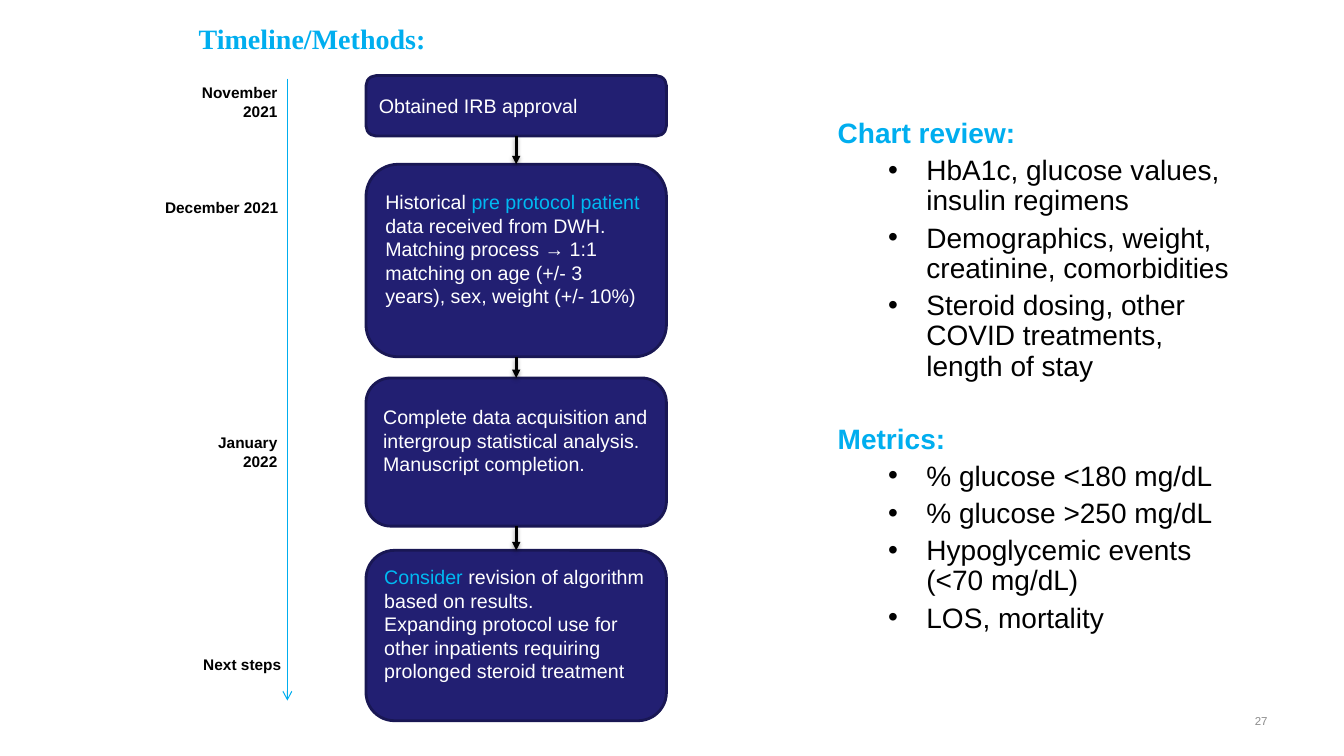
"""Build the Timeline/Methods slide: dated timeline, flow of steps and review criteria."""
from lxml import etree
from pptx import Presentation
from pptx.dml.color import RGBColor
from pptx.enum.shapes import MSO_CONNECTOR, MSO_SHAPE
from pptx.enum.text import MSO_ANCHOR as ANCHOR, PP_ALIGN as ALIGN
from pptx.oxml.ns import qn
from pptx.util import Pt

PX = 9144
CYAN, SKY, NAVY, EDGE = "00AEEF", "00B9F2", "221F72", "191754"
BLACK, WHITE, GREY = "000000", "FFFFFF", "8C8C8C"


def color(hex_value):
    return RGBColor.from_string(hex_value)


def write(paragraph, runs, size, align=ALIGN.LEFT, bold=False, font="Arial"):
    paragraph.alignment = align
    for text, run_color in runs:
        run = paragraph.add_run()
        run.text = text
        for name, value in {"size": Pt(size), "bold": bold, "name": font}.items():
            setattr(run.font, name, value)
        run.font.color.rgb = color(run_color)


presentation = Presentation()
presentation.slide_width = 1333 * PX
presentation.slide_height = 750 * PX
slide = presentation.slides.add_slide(presentation.slide_layouts[5])
shapes = slide.shapes

title = shapes.title
for name, value in {"left": 187, "top": 16, "width": 900, "height": 68}.items():
    setattr(title, name, value * PX)
title.text_frame.vertical_anchor = ANCHOR.TOP
write(title.text_frame.paragraphs[0], [("Timeline/Methods:", CYAN)], 20, bold=True, font="Times New Roman")

labels = [
    ("November 2021", 167, 78, 118, 47, 11, BLACK, True, ANCHOR.TOP),
    ("December 2021", 151, 192, 135, 29, 11, BLACK, True, ANCHOR.TOP),
    ("January 2022", 182, 425, 103, 47, 11, BLACK, True, ANCHOR.TOP),
    ("Next steps", 186, 645, 103, 29, 11, BLACK, True, ANCHOR.TOP),
    ("27", 956, 695, 311, 40, 8.2, GREY, False, ANCHOR.MIDDLE),
]
for text, left, top, width, height, size, text_color, bold, anchor in labels:
    frame = shapes.add_textbox(left * PX, top * PX, width * PX, height * PX).text_frame
    frame.word_wrap = True
    frame.vertical_anchor = anchor
    write(frame.paragraphs[0], [(text, text_color)], size, ALIGN.RIGHT, bold)

steps = [
    (75, 60, 5, [[("Obtained IRB approval", WHITE)]]),
    (163, 191, 28, [
        [("Historical ", WHITE), ("pre protocol patient ", SKY), ("data received from DWH.", WHITE)],
        [("Matching process → 1:1 matching on age (+/- 3 years), sex, weight (+/- 10%)", WHITE)],
    ]),
    (375, 147, 28, [
        [("Complete data acquisition and intergroup statistical analysis.", WHITE)],
        [("Manuscript completion.", WHITE)],
    ]),
    (546, 169, 28, [
        [("Consider ", SKY), ("revision of algorithm based on results.", WHITE)],
        [("Expanding protocol use for other inpatients requiring prolonged steroid treatment", WHITE)],
    ]),
]
boxes = []
for top, height, bottom_margin, paragraphs in steps:
    box = shapes.add_shape(MSO_SHAPE.ROUNDED_RECTANGLE, 363 * PX, top * PX, 298 * PX, height * PX)
    box.shadow.inherit = False
    box.fill.solid()
    box.fill.fore_color.rgb = color(NAVY)
    box.line.color.rgb = color(EDGE)
    box.line.width = Pt(2)
    frame = box.text_frame
    frame.word_wrap = True
    frame.vertical_anchor = ANCHOR.MIDDLE
    frame.margin_bottom = bottom_margin * PX
    for index, runs in enumerate(paragraphs):
        paragraph = frame.add_paragraph() if index else frame.paragraphs[0]
        write(paragraph, runs, 14)
    boxes.append(box)

timeline = shapes.add_connector(MSO_CONNECTOR.STRAIGHT, 285 * PX, 78 * PX, 285 * PX, 695 * PX)
arrows = [(timeline, CYAN, 0.75, "arrow")]
for upper, lower in zip(boxes, boxes[1:]):
    link = shapes.add_connector(MSO_CONNECTOR.STRAIGHT, 0, 0, 0, 0)
    link.begin_connect(upper, 2)
    link.end_connect(lower, 0)
    arrows.append((link, BLACK, 2, "triangle"))
for arrow, line_color, width, head in arrows:
    arrow.line.color.rgb = color(line_color)
    arrow.line.width = Pt(width)
    properties = arrow.element.spPr
    etree.SubElement(properties.find(qn("a:ln")), qn("a:tailEnd"), type=head)
    effects = etree.SubElement(properties, qn("a:effectLst"))
    if arrow is not timeline:
        shadow = etree.SubElement(effects, qn("a:outerShdw"), blurRad="40000", dist="20000", dir="5400000", rotWithShape="0")
        shade = etree.SubElement(shadow, qn("a:srgbClr"), val=BLACK)
        etree.SubElement(shade, qn("a:alpha"), val="38000")

criteria = {
    "Chart review:": [
        "HbA1c, glucose values, insulin regimens",
        "Demographics, weight, creatinine, comorbidities",
        "Steroid dosing, other COVID treatments, length of stay",
    ],
    "Metrics:": [
        "% glucose <180 mg/dL",
        "% glucose >250 mg/dL",
        "Hypoglycemic events (<70 mg/dL)",
        "LOS, mortality",
    ],
}
frame = shapes.add_textbox(821 * PX, 85 * PX, 421 * PX, 588 * PX).text_frame
frame.word_wrap = True
for index, (heading, items) in enumerate(criteria.items()):
    paragraph = frame.add_paragraph() if index else frame.paragraphs[0]
    paragraph.line_spacing = Pt(42)
    paragraph.space_before = Pt(10 if index else 0)
    write(paragraph, [(heading, CYAN)], 20, bold=True)
    for item in items:
        paragraph = frame.add_paragraph()
        paragraph.level = 1
        layout = paragraph._p.get_or_add_pPr()
        layout.set("marL", str(88 * PX))
        layout.set("indent", str(-38 * PX))
        etree.SubElement(layout, qn("a:buFont"), typeface="Arial")
        etree.SubElement(layout, qn("a:buChar"), char="•")
        paragraph.line_spacing = 0.9
        paragraph.space_before = Pt(5)
        write(paragraph, [(item, BLACK)], 20)

presentation.save("out.pptx")
